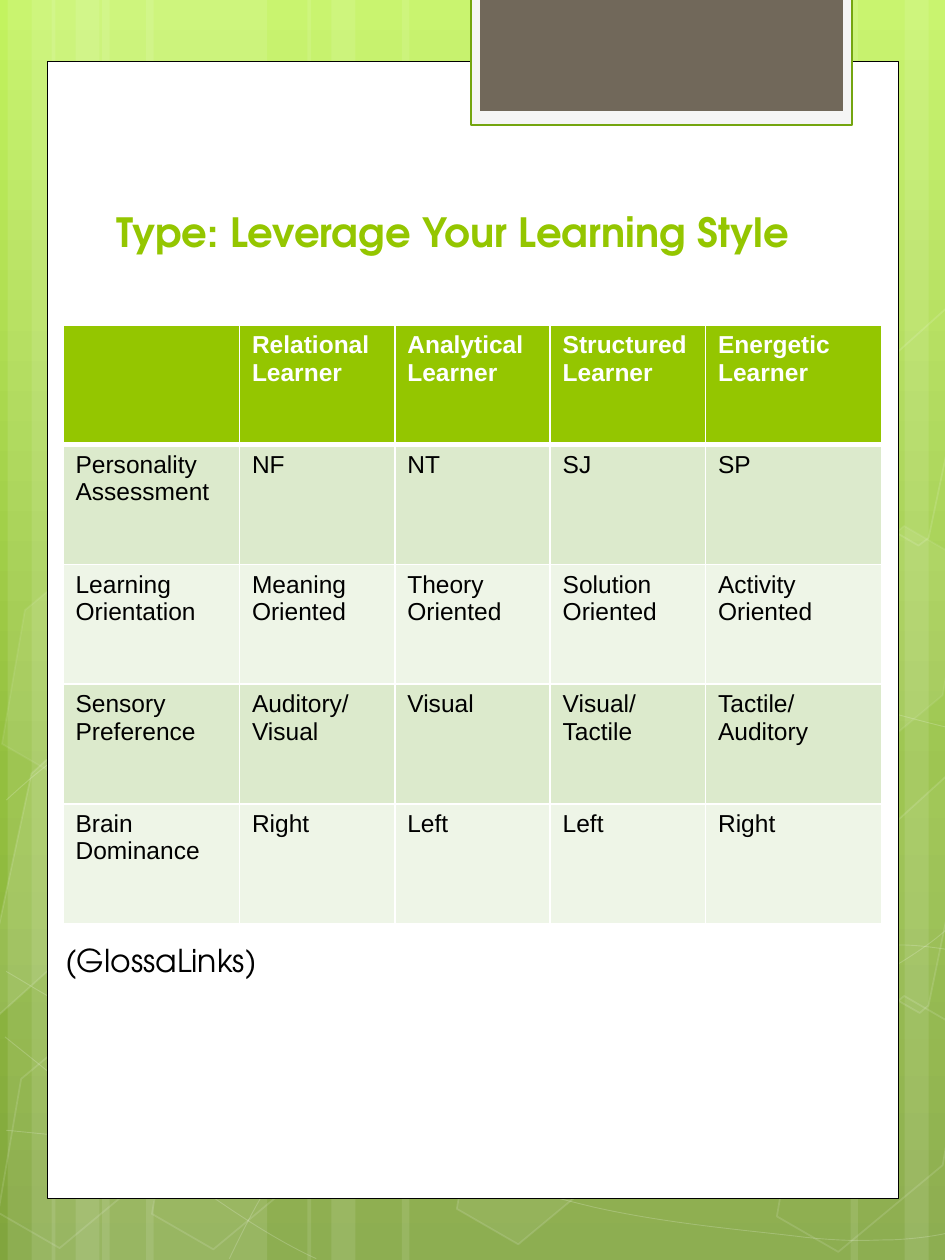
from copy import deepcopy
from dataclasses import dataclass
from typing import Optional

from lxml import etree
from pptx import Presentation
from pptx import util as u
from pptx.dml.color import RGBColor
from pptx.enum import shapes, text
from pptx.oxml import ns

COLUMNS, ROWS = 7.5, 10
UNIT = u.Inches(1)
WHITE = RGBColor(0xFF, 0xFF, 0xFF)
BLACK = RGBColor(0, 0, 0)
LIME = RGBColor(0x94, 0xC6, 0x00)
PALE = RGBColor(0xDC, 0xEA, 0xCC)
PALER = RGBColor(0xEE, 0xF5, 0xE7)
SMOKE = RGBColor(0xF5, 0xF5, 0xF5)
MOSS = RGBColor(0x74, 0xA5, 0x10)
TAUPE = RGBColor(0x71, 0x68, 0x5A)
SKY = ((0, RGBColor(0xC3, 0xF3, 0x5F)), (0.62, RGBColor(0x93, 0xBF, 0x3F)),
       (1, RGBColor(0x81, 0xA5, 0x3E)))
DISPLAY, BODY = "TeX Gyre Adventor", "Arial"


@dataclass(frozen=True)
class Area:
    left: float
    top: float
    width: float
    height: float

    def emu(self) -> tuple[int, ...]:
        return tuple(int(n * UNIT) for n in (self.left, self.top, self.width, self.height))


@dataclass(frozen=True)
class Paint:
    fill: Optional[RGBColor] = None
    fill_alpha: int = 100
    line: Optional[RGBColor] = None
    line_width: float = 1
    line_alpha: int = 100


@dataclass(frozen=True)
class Facet:
    points: tuple[tuple[float, float], ...]
    paint: Paint


def glass(fill_alpha: int, line_alpha: int) -> Paint:
    return Paint(WHITE if fill_alpha else None, fill_alpha, WHITE, 1, line_alpha)


BAND = Paint(WHITE, 10)
THREAD = Paint(line=WHITE, line_width=0.5, line_alpha=20)
HEXAGONS = ((3.72, 7.85, glass(6, 12)), (0.08, 7.88, glass(0, 12)),
            (0.11, 4.16, glass(7, 8)), (1.3, 7.89, glass(0, 12)),
            (6.26, 7.91, glass(0, 12)), (6.26, 4.18, glass(7, 8)))
FACETS = (
    Facet(((0.25, 6.14), (0.37, 6.03), (0.94, 6.36), (0.72, 7.4), (-0.07, 8.11),
           (-0.16, 8.06)), glass(10, 12)),
    Facet(((6.95, 6.67), (7.73, 5.96), (7.78, 5.99), (7.37, 7.98), (7.3, 8.04),
           (6.72, 7.71)), glass(4, 12)),
    Facet(((6.94, 2.96), (7.73, 2.25), (7.79, 2.28), (7.37, 4.27), (7.29, 4.33),
           (6.72, 4)), glass(0, 12)),
)
THREADS = (
    ((0.05, 8.97), (0.46, 9.01), (0.86, 9.06), (1.43, 9.04), (1.99, 9.02), (2.68, 9),
     (3.43, 8.87), (4.19, 8.73), (5.25, 8.48), (5.94, 8.23), (6.62, 7.97), (7.33, 7.57),
     (7.55, 7.34)),
    ((0.05, 6.35), (0.27, 6.15), (0.49, 5.95), (0.91, 5.75), (1.34, 5.55), (1.94, 5.26),
     (2.61, 5.16), (3.27, 5.06), (4.08, 5.06), (4.9, 5.16), (5.73, 5.26), (7.1, 5.68),
     (7.55, 5.78)),
    ((0.04, 8.23), (0.95, 8.96), (1.85, 9.69), (2.51, 9.99)),
    ((0.05, 7.71), (0.29, 7.85), (0.52, 8), (0.96, 8.21), (1.4, 8.42), (2.05, 8.74),
     (2.67, 8.97), (3.3, 9.2), (4.09, 9.43), (4.71, 9.58), (5.33, 9.72), (6, 9.77),
     (6.39, 9.82), (6.79, 9.86), (6.89, 9.84), (7.09, 9.84), (7.28, 9.83), (7.42, 9.81),
     (7.55, 9.78)),
    ((1.82, 9.99), (1.95, 9.72), (2.08, 9.46), (2.26, 9.21), (2.45, 8.97), (2.7, 8.7),
     (2.91, 8.52), (3.12, 8.34), (3.25, 8.26), (3.52, 8.12), (3.8, 7.99), (4.3, 7.8),
     (4.56, 7.71), (4.83, 7.62), (4.87, 7.62), (5.1, 7.58), (5.33, 7.55), (5.7, 7.51),
     (5.96, 7.5), (6.21, 7.48), (6.65, 7.5), (6.65, 7.5), (6.81, 7.5), (6.98, 7.5),
     (7.14, 7.5), (7.28, 7.5), (7.41, 7.52), (7.48, 7.53), (7.54, 7.54), (7.52, 7.54),
     (7.54, 7.55)),
)
LEARNERS = (
    ("", "Relational Learner", "Analytical Learner", "Structured Learner", "Energetic Learner"),
    ("Personality Assessment", "NF", "NT", "SJ", "SP"),
    ("Learning Orientation", "Meaning Oriented", "Theory Oriented", "Solution Oriented",
     "Activity Oriented"),
    ("Sensory Preference", "Auditory/ Visual", "Visual", "Visual/ Tactile", "Tactile/ Auditory"),
    ("Brain Dominance", "Right", "Left", "Left", "Right"),
)


def apply_paint(shape, paint: Paint) -> None:
    shape.shadow.inherit = False
    for colour, alpha, fill, where in (
            (paint.fill, paint.fill_alpha, shape.fill, "p:spPr/a:solidFill/a:srgbClr"),
            (paint.line, paint.line_alpha, shape.line.fill, "p:spPr/a:ln/a:solidFill/a:srgbClr")):
        if colour is None:
            fill.background()
            continue
        fill.solid()
        fill.fore_color.rgb = colour
        if alpha < 100:
            node = shape.element.xpath(where)[0]
            etree.SubElement(node, ns.qn("a:alpha")).set("val", str(alpha * 1000))
    if paint.line is not None:
        shape.line.width = u.Pt(paint.line_width)


def add_box(page, area: Area, paint: Paint, kind=shapes.MSO_SHAPE.RECTANGLE):
    box = page.shapes.add_shape(kind, *area.emu())
    apply_paint(box, paint)
    return box


def add_outline(page, points, paint: Paint, close: bool):
    start, *others = [(x * UNIT, y * UNIT) for x, y in points]
    builder = page.shapes.build_freeform(*start)
    builder.add_line_segments(others, close=close)
    outline = builder.convert_to_shape()
    apply_paint(outline, paint)
    return outline


def add_thread(page, knots) -> None:
    thread = add_outline(page, knots, THREAD, False)
    segments = thread.element.xpath(".//a:path/a:lnTo")
    for first in range(0, len(segments), 3):
        curve = etree.Element(ns.qn("a:cubicBezTo"))
        segments[first].addprevious(curve)
        for segment in segments[first:first + 3]:
            curve.append(segment[0])
            segment.getparent().remove(segment)


def style(paragraph, size: float, name: str, colour: RGBColor, bold: bool = False) -> None:
    for span in paragraph.runs:
        span.font.size, span.font.name, span.font.bold = u.Pt(size), name, bold
        span.font.color.rgb = colour


def add_label(page, area: Area, words: str, size: float, colour: RGBColor,
              bold: bool = False, anchor=text.MSO_ANCHOR.TOP) -> None:
    frame = page.shapes.add_textbox(*area.emu()).text_frame
    frame.word_wrap, frame.vertical_anchor, frame.text = True, anchor, words
    style(frame.paragraphs[0], size, DISPLAY, colour, bold)


def add_borders(cell, header: bool) -> None:
    properties = cell._tc.get_or_add_tcPr()
    for place, side in enumerate(("lnL", "lnR", "lnT", "lnB")):
        width = 3 if header and side == "lnB" else 1
        line = etree.Element(ns.qn(f"a:{side}"), w=str(u.Pt(width)))
        fill = etree.SubElement(line, ns.qn("a:solidFill"))
        etree.SubElement(fill, ns.qn("a:srgbClr")).set("val", str(WHITE))
        properties.insert(place, line)


def add_learners(page, area: Area, outer: float) -> None:
    table = page.shapes.add_table(len(LEARNERS), len(LEARNERS[0]), *area.emu()).table
    inner = (area.width - 2 * outer) / 3
    for column, width in zip(table.columns, (outer, inner, inner, inner, outer)):
        column.width = int(width * UNIT)
    for row, words in enumerate(LEARNERS):
        header = row == 0
        for column, word in enumerate(words):
            cell = table.cell(row, column)
            cell.text = word
            style(cell.text_frame.paragraphs[0], 14, BODY, WHITE if header else BLACK, header)
            cell.fill.solid()
            cell.fill.fore_color.rgb = LIME if header else (PALER, PALE)[row % 2]
            add_borders(cell, header)


def add_backdrop(page) -> None:
    fill = page.background.fill
    fill.gradient()
    fill.gradient_angle = 270
    first = page.element.xpath(".//a:gsLst/a:gs")[0]
    first.addnext(deepcopy(first))
    for stop, (position, colour) in zip(fill.gradient_stops, SKY):
        stop.position, stop.color.rgb = position, colour
    for left, width, mirrored in ((0.81, 1.31, True), (1.16, 1.31, False), (3.19, 2.31, False)):
        for start, span in ((left, width), (left - 0.75, 0.38), (left - 0.56, 0.62)):
            add_box(page, Area(start, 0, span, ROWS), BAND)
            if mirrored:
                add_box(page, Area(7.62 - start - span, 0, span, ROWS), BAND)
    for knots in THREADS:
        add_thread(page, knots)
    for left, top, paint in HEXAGONS:
        hexagon = add_box(page, Area(left, top, 1.31, 2.02), paint, shapes.MSO_SHAPE.HEXAGON)
        hexagon.adjustments[0], hexagon.adjustments[1] = 0.285, 1.155
        hexagon.rotation = 30
    for facet in FACETS:
        add_outline(page, facet.points, facet.paint, True)


def main() -> None:
    """Build the learning style slide and save it."""
    deck = Presentation()
    deck.slide_width, deck.slide_height = int(COLUMNS * UNIT), ROWS * UNIT
    page = deck.slides.add_slide(deck.slide_layouts[6])
    add_backdrop(page)
    add_box(page, Area(0.38, 0.49, 6.75, 9.02), Paint(WHITE, line=BLACK, line_width=0.5))
    add_box(page, Area(3.74, -0.03, 3.02, 1.02), Paint(SMOKE, line=MOSS, line_width=1.25))
    add_box(page, Area(3.81, -0.03, 2.88, 0.91), Paint(TAUPE))
    add_label(page, Area(0.83, 1.25, 5.76, 0.83), "Type: Leverage Your Learning Style",
              23, LIME, True, text.MSO_ANCHOR.BOTTOM)
    add_learners(page, Area(0.5, 2.58, 6.5, 4.75), 1.4)
    add_label(page, Area(0.42, 7.42, 5, 0.4), "(GlossaLinks)", 18, BLACK)
    deck.save("out.pptx")


if __name__ == "__main__":
    main()
